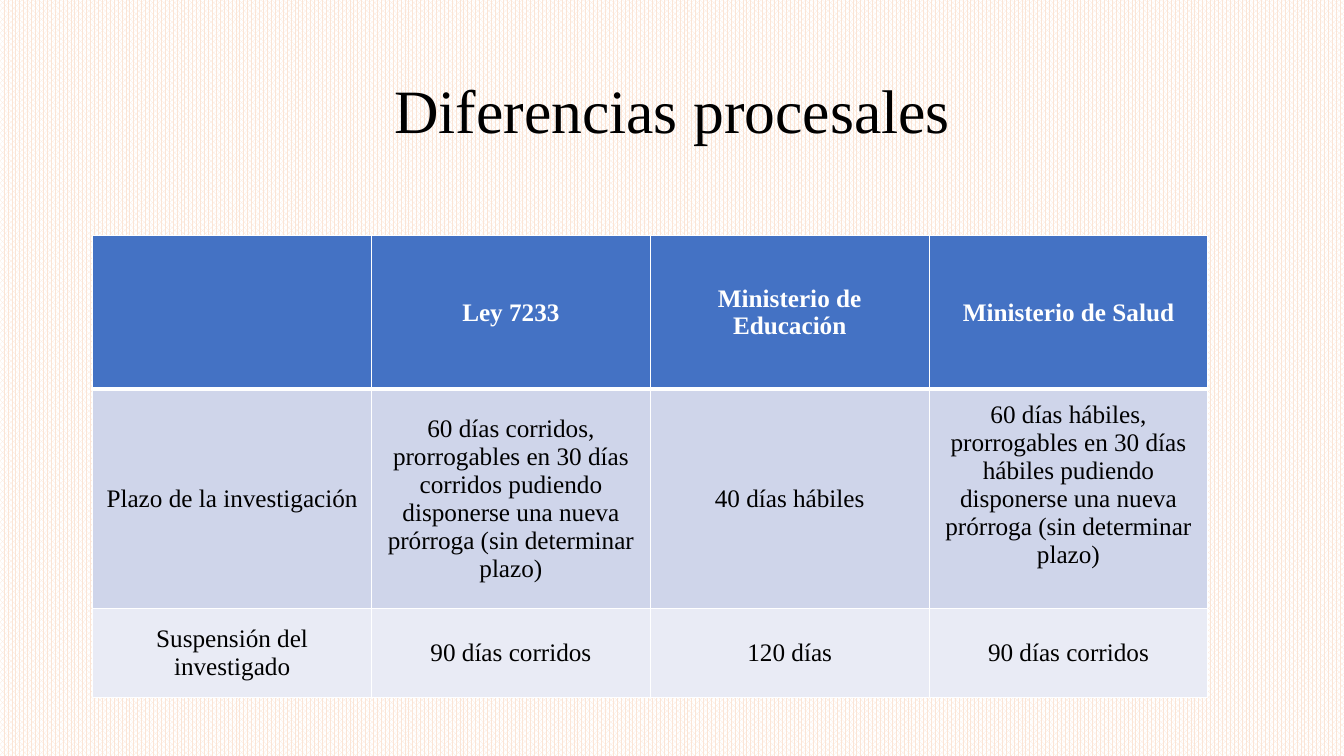
from dataclasses import dataclass

from lxml import etree
from pptx import Presentation
from pptx.dml.color import RGBColor
from pptx.enum.dml import MSO_PATTERN
from pptx.enum.text import MSO_ANCHOR, PP_ALIGN
from pptx.oxml.ns import qn
from pptx.util import Inches, Pt

MIDDLE = MSO_ANCHOR.MIDDLE
CENTER = PP_ALIGN.CENTER
DOTS = MSO_PATTERN.PERCENT_75


@dataclass(frozen=True)
class Theme:
    font: str = "Times New Roman"
    title: int = 44
    body: int = 18
    ink: str = "000000"
    white: str = "FFFFFF"
    peach: str = "FBE5D6"
    bands: tuple = ("4472C4", "CFD5EA", "E9EBF5")
    thin: int = 1
    thick: int = 3


THEME = Theme()
color = RGBColor.from_string


def write(frame, text, size=THEME.body, ink=THEME.ink, bold=False, space=1.0):
    par = frame.paragraphs[0]
    par.alignment = CENTER
    par.line_spacing = space
    run = par.add_run()
    run.text = text
    run.font.name = THEME.font
    run.font.size = Pt(size)
    run.font.bold = bold
    run.font.color.rgb = color(ink)


def border(cell, **widths):
    """Draw white cell edges; keys are L, R, T, B in that order, in points."""
    props = cell._tc.get_or_add_tcPr()
    for i, (side, width) in enumerate(widths.items()):
        line = etree.Element(qn(f"a:ln{side}"), w=str(Pt(width)))
        fill = etree.SubElement(line, qn("a:solidFill"))
        etree.SubElement(fill, qn("a:srgbClr"), val=THEME.white)
        props.insert(i, line)


deck = Presentation()
deck.slide_width = Inches(13.33)
deck.slide_height = Inches(7.5)
slide = deck.slides.add_slide(deck.slide_layouts[6])

back = slide.background.fill
back.patterned()
back.pattern = DOTS
back.fore_color.rgb = color(THEME.peach)
back.back_color.rgb = color(THEME.white)

# Title
box = slide.shapes.add_textbox(Inches(0.92), Inches(0.4), Inches(11.5), Inches(1.45))
frame = box.text_frame
frame.word_wrap = True
frame.vertical_anchor = MIDDLE
write(frame, "Diferencias procesales", size=THEME.title, space=0.9)

# Table of terms
TERM = ("60 días {0}, prorrogables en 30 días {0} pudiendo disponerse "
        "una nueva prórroga (sin determinar plazo)")
ROWS = [
    ["", "Ley 7233", "Ministerio de Educación", "Ministerio de Salud"],
    ["Plazo de la investigación", TERM.format("corridos"),
     "40 días hábiles", TERM.format("hábiles")],
    ["Suspensión del investigado", "90 días corridos", "120 días", "90 días corridos"],
]
HEIGHTS = [1.52, 2.04, 0.88]

table = slide.shapes.add_table(
    len(ROWS), len(ROWS[0]), Inches(0.92), Inches(2.34),
    Inches(11.06), Inches(sum(HEIGHTS))).table

for r, (texts, height) in enumerate(zip(ROWS, HEIGHTS)):
    table.rows[r].height = Inches(height)
    head = r == 0
    for c, text in enumerate(texts):
        cell = table.cell(r, c)
        cell.vertical_anchor = MIDDLE
        cell.fill.solid()
        cell.fill.fore_color.rgb = color(THEME.bands[r])
        border(cell, L=THEME.thin, R=THEME.thin,
               T=THEME.thick if r == 1 else THEME.thin,
               B=THEME.thick if head else THEME.thin)
        if text:
            write(cell.text_frame, text, bold=head,
                  ink=THEME.white if head else THEME.ink)

# The health ministry's term sits half a line higher than its row
table.cell(1, 3).margin_bottom = Inches(0.33)

deck.save("out.pptx")
